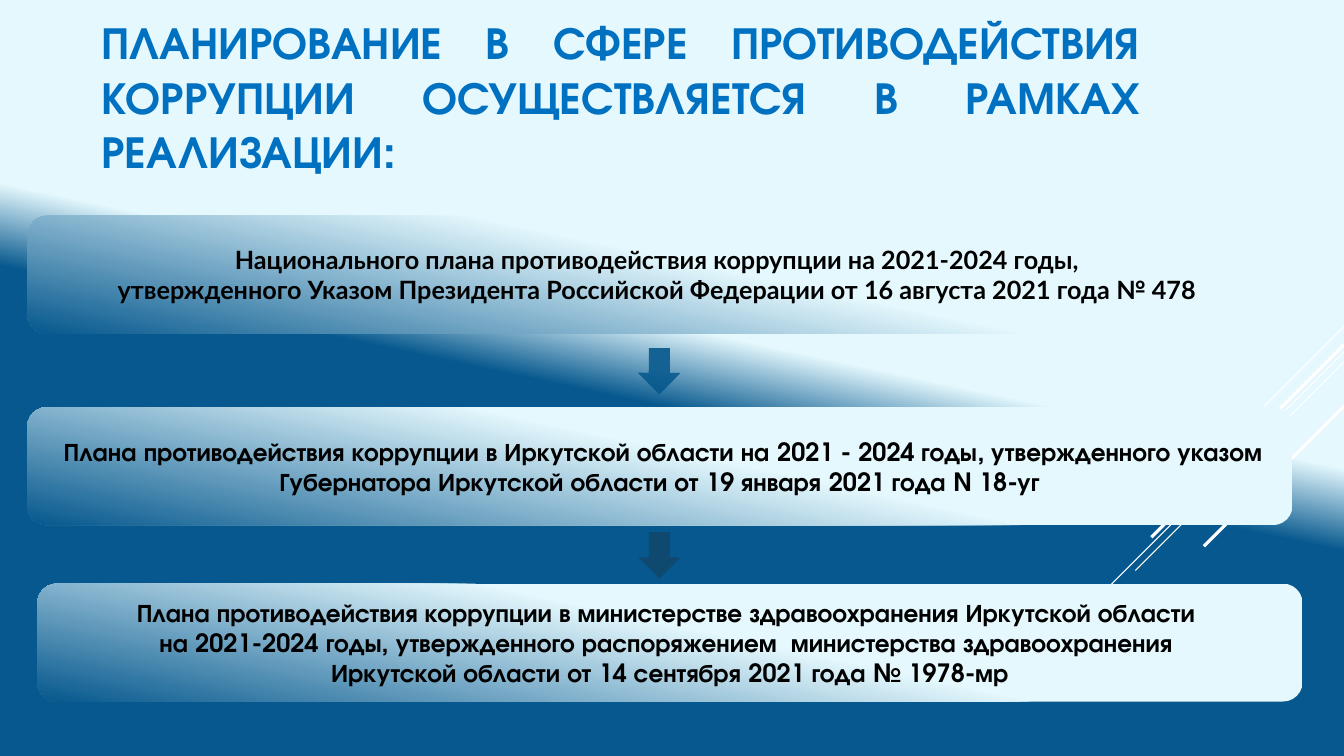
from pptx import Presentation
from pptx.dml.color import RGBColor
from pptx.enum.shapes import MSO_CONNECTOR, MSO_SHAPE
from pptx.enum.text import MSO_ANCHOR, PP_ALIGN
from pptx.oxml.ns import qn
from pptx.util import Inches, Pt
from lxml.etree import SubElement

THEME = {
    "light": RGBColor.from_string("E4F8FD"),
    "dark": RGBColor.from_string("06588E"),
    "arrow_top": RGBColor.from_string("146194"),
    "arrow_solid": RGBColor.from_string("0F496F"),
    "title": RGBColor.from_string("0070C0"),
    "text": RGBColor.from_string("000000"),
    "streak": RGBColor.from_string("FFFFFF"),
    "title_size": Pt(32.4),
    "body_size": Pt(18),
    "heading_font": "TeX Gyre Adventor",
    "plain_font": "Lato",
}


def set_gradient(fill, start_color, end_position):
    fill.gradient()
    fill.gradient_angle = 258
    stops = ((0.45, start_color), (end_position, THEME["dark"]))
    for stop, (position, color) in zip(fill.gradient_stops, stops):
        stop.position = position
        stop.color.rgb = color


def write_text(shape, lines, alignment, font_name, size, color):
    frame = shape.text_frame
    frame.word_wrap = True
    frame.vertical_anchor = MSO_ANCHOR.MIDDLE
    paragraph = frame.paragraphs[0]
    paragraph.alignment = alignment
    for index, line in enumerate(lines):
        if index:
            paragraph.add_line_break()
        run = paragraph.add_run()
        run.text = line
        run.font.name = font_name
        run.font.size = size
        run.font.bold = True
        run.font.color.rgb = color


presentation = Presentation()
presentation.slide_width = Inches(13.33)
presentation.slide_height = Inches(7.5)
slide = presentation.slides.add_slide(presentation.slide_layouts[6])
set_gradient(slide.background.fill, THEME["light"], 0.53)

streaks = (
    (3.24, 1, 0.75),
    (3.49, 3.26, 0.75),
    (3.59, 2.07, 0.75),
    (3.42, 1.91, 2.25),
    (4.03, 1.39, 2.25),
)
for top, reach, width in streaks:
    streak = slide.shapes.add_connector(
        MSO_CONNECTOR.STRAIGHT,
        Inches(13.33), Inches(top), Inches(13.33 - reach), Inches(top + reach),
    )
    streak.line.color.rgb = THEME["streak"]
    streak.line.width = Pt(width)
    SubElement(streak.element.spPr, qn("a:effectLst"))

title = slide.shapes.add_textbox(Inches(0.91), Inches(0.13), Inches(10.5), Inches(1.65))
write_text(
    title,
    ["ПЛАНИРОВАНИЕ В СФЕРЕ ПРОТИВОДЕЙСТВИЯ КОРРУПЦИИ ОСУЩЕСТВЛЯЕТСЯ В РАМКАХ РЕАЛИЗАЦИИ:"],
    PP_ALIGN.JUSTIFY, THEME["heading_font"], THEME["title_size"], THEME["title"],
)

plans = (
    (0.27, 2.14, THEME["plain_font"], [
        "Национального плана противодействия коррупции на 2021-2024 годы, ",
        "утвержденного Указом Президента Российской Федерации от 16 августа 2021 года № 478 ",
    ]),
    (0.27, 4.04, THEME["heading_font"], [
        " Плана противодействия коррупции в Иркутской области на 2021 - 2024 годы, "
        "утвержденного указом Губернатора Иркутской области от 19 января 2021 года N 18-уг",
    ]),
    (0.37, 5.79, THEME["heading_font"], [
        "Плана противодействия коррупции в министерстве здравоохранения Иркутской области ",
        "на 2021-2024 годы, утвержденного распоряжением  министерства здравоохранения ",
        "Иркутской области от 14 сентября 2021 года № 1978-мр",
    ]),
)
for left, top, font_name, lines in plans:
    plan = slide.shapes.add_shape(
        MSO_SHAPE.ROUNDED_RECTANGLE, Inches(left), Inches(top), Inches(12.55), Inches(1.17)
    )
    plan.shadow.inherit = False
    plan.line.fill.background()
    set_gradient(plan.fill, THEME["light"], 1)
    write_text(plan, lines, PP_ALIGN.CENTER, font_name, THEME["body_size"], THEME["text"])

arrows = []
for top in (3.45, 5.28):
    arrow = slide.shapes.add_shape(
        MSO_SHAPE.DOWN_ARROW, Inches(6.33), Inches(top), Inches(0.42), Inches(0.46)
    )
    arrow.shadow.inherit = False
    arrow.line.fill.background()
    arrows.append(arrow)
upper_arrow, lower_arrow = arrows
set_gradient(upper_arrow.fill, THEME["arrow_top"], 1)
lower_arrow.fill.solid()
lower_arrow.fill.fore_color.rgb = THEME["arrow_solid"]

presentation.save("out.pptx")
